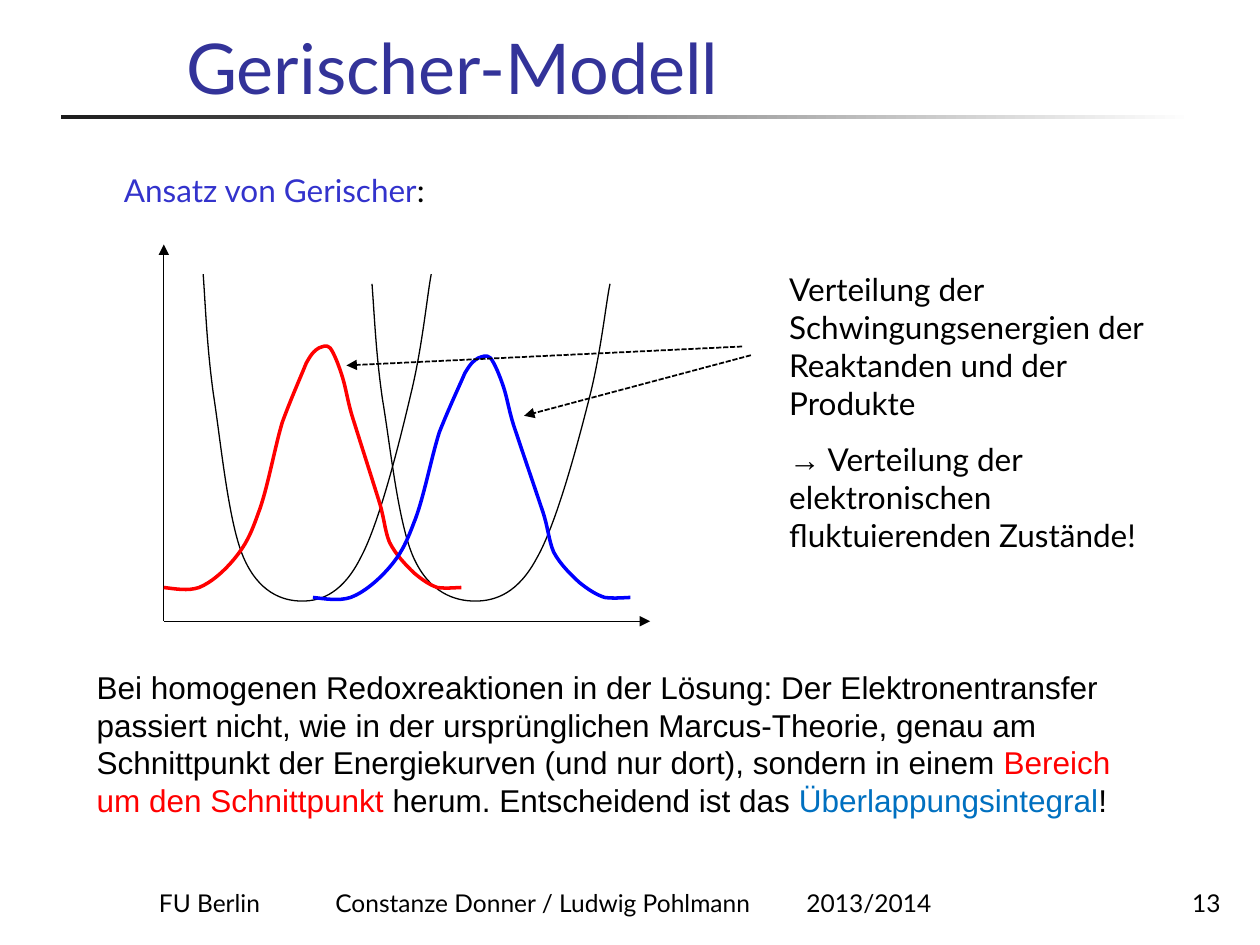
from lxml import etree
from pptx import Presentation
from pptx.dml.color import RGBColor
from pptx.enum.dml import MSO_LINE
from pptx.enum.shapes import MSO_CONNECTOR, MSO_SHAPE
from pptx.enum.text import MSO_ANCHOR as ANCHOR, PP_ALIGN as ALIGN
from pptx.oxml.ns import qn
from pptx.util import Pt

BLACK, RED, BLUE = "000000", "FF0000", "0000FF"

# Curves as a (width, height) and cubic points: start, then two controls and an end each
WELL = (182, 259), [
    (0, 0), (2, 28), (3, 57), (8, 94), (14, 132), (20, 196), (32, 224),
    (44, 252), (63, 259), (79, 259), (95, 259), (112, 252), (126, 224),
    (141, 196), (157, 132), (166, 94), (175, 57), (179, 15), (182, 0)]
BELL = (236, 196), [
    (0, 193), (9, 194), (19, 196), (28, 193), (38, 189), (49, 179), (57, 169),
    (65, 159), (69, 151), (75, 134), (82, 116), (88, 82), (94, 62),
    (101, 43), (109, 25), (113, 15), (118, 6), (120, 5), (123, 3),
    (126, 2), (129, 0), (132, 3), (135, 7), (139, 17), (142, 27),
    (145, 37), (146, 47), (151, 62), (156, 78), (165, 106), (170, 122),
    (175, 137), (175, 147), (179, 157), (184, 167), (192, 175), (198, 181),
    (205, 187), (211, 191), (217, 193), (224, 194), (233, 193), (236, 193)]


def rgb(value):
    return RGBColor.from_string(value)


def write(tf, paragraphs, size=18, font="Lato", align=ALIGN.LEFT, anchor=ANCHOR.TOP,
          indent=0, before=0, tabs=()):
    """Each paragraph is a list of (text, color) or (text, color, font) runs."""
    tf.word_wrap = True
    tf.vertical_anchor = anchor
    for i, runs in enumerate(paragraphs):
        p = tf.add_paragraph() if i else tf.paragraphs[0]
        p.alignment = align
        p.space_before = Pt(before if i else 0)
        pPr = p._p.get_or_add_pPr()
        if indent:
            pPr.set("marL", str(Pt(indent)))
            pPr.set("indent", "0")
        if tabs:
            tab_list = etree.SubElement(pPr, qn("a:tabLst"))
            for pos in tabs:
                etree.SubElement(tab_list, qn("a:tab"), pos=str(Pt(pos)), algn="l")
        for text, color, *other in runs:
            r = p.add_run()
            r.text = text
            r.font.name = other[0] if other else font
            r.font.size = Pt(size)
            r.font.color.rgb = rgb(color)


def textbox(slide, box, paragraphs, **fmt):
    sp = slide.shapes.add_textbox(*map(Pt, box))
    write(sp.text_frame, paragraphs, **fmt)


def arrow(slide, start, end, width=0.75, dash=None):
    cx = slide.shapes.add_connector(MSO_CONNECTOR.STRAIGHT, *map(Pt, start + end))
    cx.line.color.rgb = rgb(BLACK)
    cx.line.width = Pt(width)
    if dash:
        cx.line.dash_style = dash
    etree.SubElement(cx.line._get_or_add_ln(), qn("a:tailEnd"), type="triangle")
    etree.SubElement(cx._element.spPr, qn("a:effectLst"))


def curve(slide, box, outline, color, width):
    x, y, w, h = box
    (unit_w, unit_h), points = outline
    placed = [(Pt(x + px * w / unit_w), Pt(y + py * h / unit_h)) for px, py in points]
    builder = slide.shapes.build_freeform(*placed[0])
    builder.add_line_segments(placed[1:], close=False)
    sp = builder.convert_to_shape()
    # Turn every three line segments into one cubic segment
    lines = list(sp._element.iter(qn("a:lnTo")))
    for i in range(0, len(lines), 3):
        cubic = etree.Element(qn("a:cubicBezTo"))
        lines[i].addprevious(cubic)
        for line in lines[i:i + 3]:
            cubic.append(line[0])
            line.getparent().remove(line)
    sp.shadow.inherit = False
    sp.fill.background()
    sp.line.color.rgb = rgb(color)
    sp.line.width = Pt(width)


def add_header(slide, box):
    x, y, w, h = box
    # Fading rule under the title
    rule = slide.shapes.add_shape(MSO_SHAPE.RECTANGLE, Pt(x), Pt(y + h), Pt(w), Pt(2.2))
    rule.shadow.inherit = False
    rule.line.fill.background()
    rule.fill.gradient()
    rule.fill.gradient_angle = 0
    for stop, color in zip(rule.fill.gradient_stops, ("1C1C1C", "FFFFFF")):
        stop.color.rgb = rgb(color)
    # Title
    title = slide.shapes.title
    title.left, title.top, title.width, title.height = map(Pt, (x + 64.6, y, 604.8, h))
    write(title.text_frame, [[("Gerischer-Modell", "333399")]], size=40, anchor=ANCHOR.BOTTOM)


def add_diagram(slide, box):
    x, y, w, h = box
    origin = (x, y + h)
    arrow(slide, origin, (x, y))
    arrow(slide, origin, (x + w, y + h))
    # Energy curves, then the distributions
    curve(slide, (x + 22.5, y + 17, 130.3, 186.8), WELL, BLACK, 0.75)
    curve(slide, (x + 119, y + 22.5, 136, 181.3), WELL, BLACK, 0.75)
    curve(slide, (x, y + 57, 170, 141.2), BELL, RED, 2)
    curve(slide, (x + 85.2, y + 62.7, 181.4, 141.2), BELL, BLUE, 2)


def add_note(slide, box):
    x, y, w, h = box
    textbox(slide, box, [
        [("Verteilung der Schwingungsenergien der Reaktanden und der Produkte", BLACK)],
        [("→", BLACK, "Arial"),
         (" Verteilung der elektronischen fluktuierenden Zustände!", BLACK)],
    ], indent=27, before=10.8)
    # Pointers to the two distributions
    for start, end in (((12.2, 52.2), (-117.4, 86.8)), ((7.2, 47.2), (-218.9, 58))):
        arrow(slide, (x + start[0], y + start[1]), (x + end[0], y + end[1]),
              width=1, dash=MSO_LINE.SQUARE_DOT)


def add_conclusion(slide, box):
    textbox(slide, box, [[
        ("Bei homogenen Redoxreaktionen in der Lösung: Der Elektronentransfer passiert "
         "nicht, wie in der ursprünglichen Marcus-Theorie, genau am Schnittpunkt der "
         "Energiekurven (und nur dort), sondern in einem ", BLACK),
        ("Bereich um den Schnittpunkt ", RED),
        ("herum. Entscheidend ist das ", BLACK),
        ("Überlappungsintegral", "0070C0"),
        ("!", BLACK),
    ]], font="Arial")


def add_footer(slide, box):
    x, y, w, h = box
    number_w = 95
    fmt = dict(size=14, anchor=ANCHOR.BOTTOM)
    textbox(slide, (x, y, w - number_w, h),
            [[("FU Berlin\tConstanze Donner / Ludwig Pohlmann\t2013/2014", BLACK)]],
            tabs=(100.8, 370), **fmt)
    textbox(slide, (x + w - number_w, y, number_w, h), [[("13", BLACK)]],
            align=ALIGN.RIGHT, **fmt)


def main():
    prs = Presentation()
    prs.slide_width, prs.slide_height = Pt(720), Pt(540)
    slide = prs.slides.add_slide(prs.slide_layouts[5])
    add_header(slide, (34.6, 16.6, 648, 49))
    textbox(slide, (36.7, 94.3, 550, 29),
            [[("Ansatz von Gerischer", "3333CC"), (":", BLACK)]], indent=27)
    add_diagram(slide, (93.6, 139.7, 277.9, 215.3))
    add_note(slide, (416.9, 150.8, 244.1, 169.2))
    add_conclusion(slide, (48.2, 378, 612, 94.3))
    add_footer(slide, (83.7, 491.8, 620.9, 36))
    prs.save("out.pptx")


if __name__ == "__main__":
    main()
